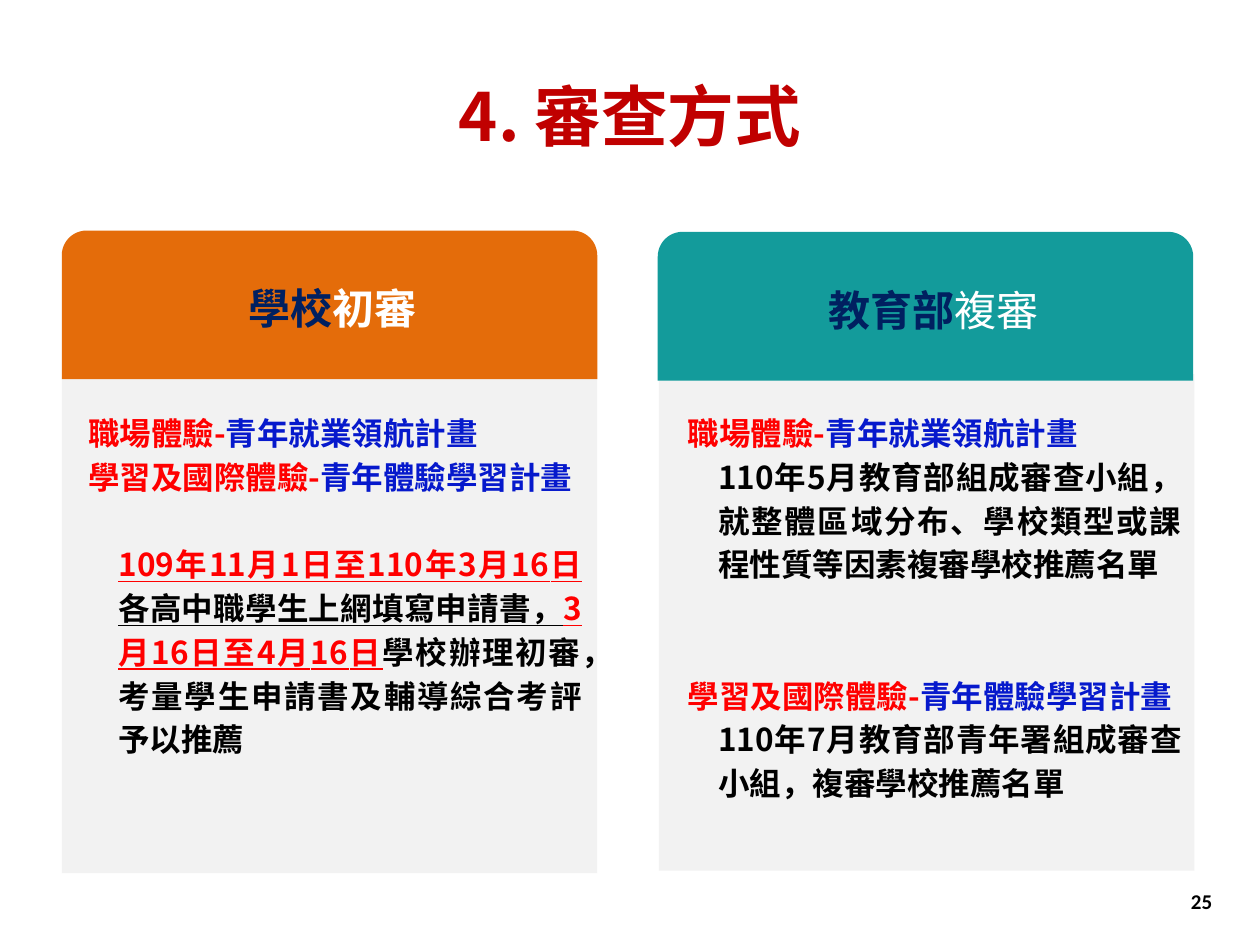
import dataclasses

import lxml.etree
import pptx
import pptx.dml.color
import pptx.enum.shapes
import pptx.enum.text
import pptx.oxml.ns
import pptx.util

ALIGN = pptx.enum.text.PP_ALIGN
ANCHOR = pptx.enum.text.MSO_ANCHOR
SHAPE = pptx.enum.shapes.MSO_SHAPE


@dataclasses.dataclass(frozen=True)
class Theme:
    cjk: str = "Noto Sans CJK SC"
    latin: str = "Calibri"
    title: str = "C00000"
    school: str = "E46C0A"
    ministry: str = "139B9B"
    panel: str = "F2F2F2"
    navy: str = "002060"
    red: str = "FF0000"
    blue: str = "0619CC"
    black: str = "000000"
    white: str = "FFFFFF"
    title_size: int = 38
    heading_size: int = 24
    body_size: int = 18
    number_size: int = 12
    line: int = 25


THEME = Theme()


def add_text(paragraph, text, size, color, font=THEME.cjk, bold=True, underline=False):
    run = paragraph.add_run()
    run.text = text
    run.font.name = font
    run.font.size = pptx.util.Pt(size)
    run.font.bold = bold
    run.font.underline = underline
    run.font.color.rgb = pptx.dml.color.RGBColor.from_string(color)
    east_asian = lxml.etree.SubElement(run.font._element, pptx.oxml.ns.qn("a:ea"))
    east_asian.set("typeface", font)


class ReviewSlide:
    COLUMNS, ROWS = 100, 75

    def __init__(self, deck, theme):
        self.theme = theme
        self.column = deck.slide_width / self.COLUMNS
        self.row = deck.slide_height / self.ROWS
        self.slide = deck.slides.add_slide(deck.slide_layouts[4])
        self.slots = {slot.placeholder_format.idx: slot for slot in self.slide.placeholders}

    def area(self, left, top, width, height):
        return (round(left * self.column), round(top * self.row),
                round(width * self.column), round(height * self.row))

    def block(self, kind, area, color):
        block = self.slide.shapes.add_shape(kind, *self.area(*area))
        block.shadow.inherit = False
        block.fill.solid()
        block.fill.fore_color.rgb = pptx.dml.color.RGBColor.from_string(color)
        block.line.fill.background()

    def frame(self, holder, area, anchor):
        holder.left, holder.top, holder.width, holder.height = self.area(*area)
        frame = holder.text_frame
        frame.word_wrap = True
        frame.auto_size = pptx.enum.text.MSO_AUTO_SIZE.NONE
        frame.vertical_anchor = anchor
        return frame

    def slot(self, idx, area, anchor=ANCHOR.MIDDLE):
        slot = self.slots[idx]
        self.slide.shapes.element.append(slot.element)
        return self.frame(slot, area, anchor)

    def plain(self, paragraph, align, indent=0, before=0):
        properties = paragraph._p.get_or_add_pPr()
        properties.set("marL", str(round(indent * self.column)))
        properties.set("indent", "0")
        lxml.etree.SubElement(properties, pptx.oxml.ns.qn("a:buNone"))
        paragraph.alignment = align
        paragraph.space_before = pptx.util.Pt(before)

    def title(self, text, area):
        paragraph = self.slot(0, area).paragraphs[0]
        self.plain(paragraph, ALIGN.CENTER)
        add_text(paragraph, text, self.theme.title_size, self.theme.title)

    def heading(self, idx, area, reviewer, stage, stage_bold):
        paragraph = self.slot(idx, area).paragraphs[0]
        self.plain(paragraph, ALIGN.CENTER)
        paragraph.line_spacing = 1.1
        size = self.theme.heading_size
        add_text(paragraph, reviewer, size, self.theme.navy)
        add_text(paragraph, stage, size, self.theme.white, bold=stage_bold)

    def body(self, idx, area, items):
        frame = self.slot(idx, area, ANCHOR.TOP)
        frame.margin_left = round(1.4 * self.column)
        frame.margin_right = round(0.5 * self.column)
        for number, (indent, blank_lines, parts) in enumerate(items):
            paragraph = frame.add_paragraph() if number else frame.paragraphs[0]
            self.plain(paragraph, ALIGN.JUSTIFY, indent, blank_lines * self.theme.line)
            paragraph.line_spacing = pptx.util.Pt(self.theme.line)
            for text, color, underline in parts:
                add_text(paragraph, text, self.theme.body_size, color, underline=underline)

    def page_number(self, text, area):
        holder = self.slide.shapes.add_textbox(*self.area(*area))
        paragraph = self.frame(holder, area, ANCHOR.MIDDLE).paragraphs[0]
        paragraph.alignment = ALIGN.RIGHT
        add_text(paragraph, text, self.theme.number_size, self.theme.black, self.theme.latin)


def program(track, plan, blank_lines=0):
    return 0, blank_lines, [(track + "-", THEME.red, False), (plan, THEME.blue, False)]


def details(*parts, blank_lines=0):
    return 2.4, blank_lines, parts


def main():
    deck = pptx.Presentation()
    deck.slide_width = pptx.util.Inches(10)
    deck.slide_height = pptx.util.Inches(7.5)
    review = ReviewSlide(deck, THEME)
    review.title("4. 審查方式", (0, 6.2, 100, 5.9))

    workplace = "職場體驗", "青年就業領航計畫"
    learning = "學習及國際體驗", "青年體驗學習計畫"
    school_items = [
        program(*workplace),
        program(*learning),
        details(
            ("109年11月1日至110年3月16日", THEME.red, True),
            ("各高中職學生上網填寫申請書，", THEME.black, True),
            ("3月16日至4月16日", THEME.red, True),
            ("學校辦理初審，考量學生申請書及輔導綜合考評予以推薦", THEME.black, False),
            blank_lines=1),
    ]
    ministry_items = [
        program(*workplace),
        details(("110年5月教育部組成審查小組，就整體區域分布、學校類型或課程性質等因素"
                 "複審學校推薦名單", THEME.black, False)),
        program(*learning, blank_lines=2),
        details(("110年7月教育部青年署組成審查小組，複審學校推薦名單", THEME.black, False)),
    ]
    stages = [
        (4.9, 4.9, 29.9, 18.3, 5.6, 8.7, THEME.school, "學校", "初審", True, school_items),
        (52.2, 52.3, 29.7, 18.4, 53.2, 56.4, THEME.ministry, "教育部", "複審", False,
         ministry_items),
    ]
    for number, stage in enumerate(stages):
        (cap_left, panel_left, panel_top, cap_top, body_left, heading_left,
         color, reviewer, name, bold, items) = stage
        review.block(SHAPE.RECTANGLE, (panel_left, panel_top, 42.5, 39.4), THEME.panel)
        review.block(SHAPE.ROUND_2_SAME_RECTANGLE, (cap_left, cap_top, 42.5, 11.8), color)
        review.body(2 * number + 2, (body_left, 31.9, 41.1, 37.3), items)
        review.heading(2 * number + 1, (heading_left, cap_top + 3.2, 35.4, 5.5),
                       reviewer, name, bold)

    review.page_number("25", (73.9, 69.5, 23.3, 4))
    deck.save("out.pptx")


if __name__ == "__main__":
    main()
